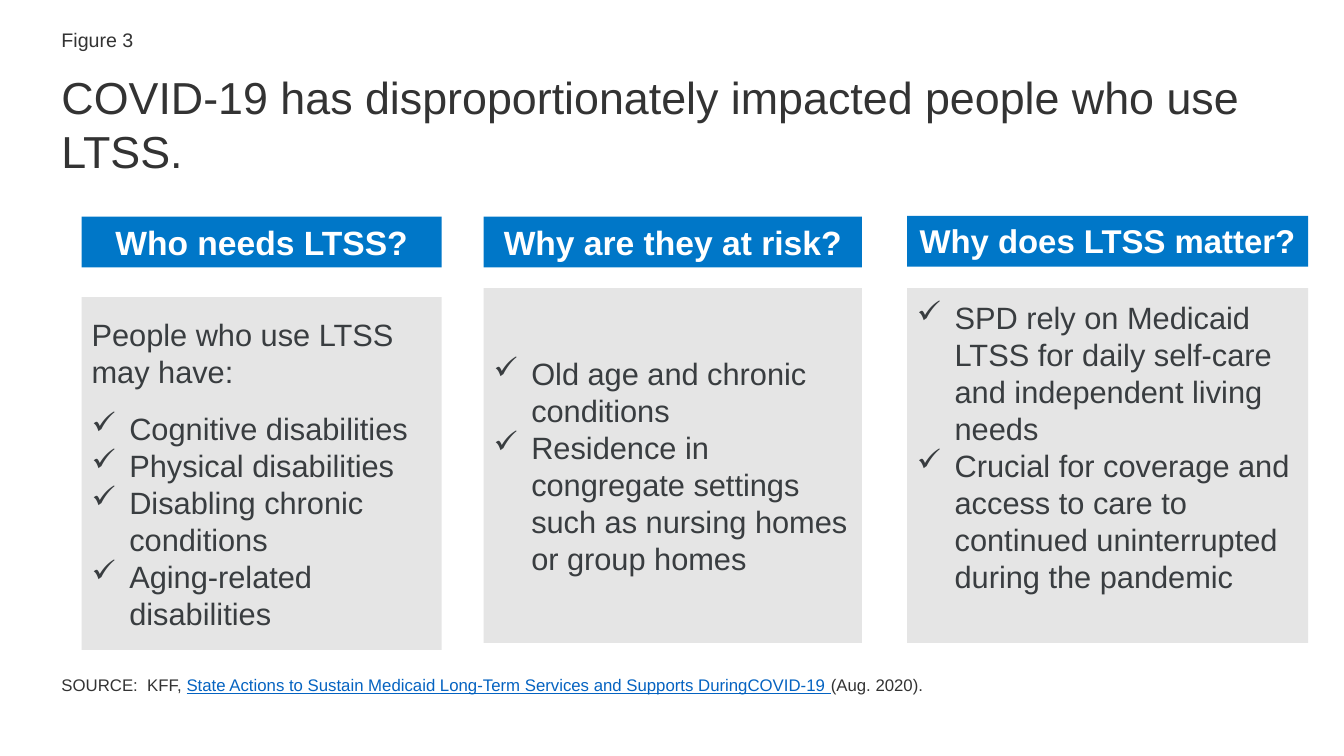
from dataclasses import dataclass

from lxml import etree
from pptx import Presentation
from pptx.dml.color import RGBColor
from pptx.enum.shapes import MSO_SHAPE
from pptx.enum.text import MSO_ANCHOR, PP_ALIGN
from pptx.oxml.ns import qn
from pptx.util import Cm, Pt

RECTANGLE = MSO_SHAPE.RECTANGLE
TOP, MIDDLE = MSO_ANCHOR.TOP, MSO_ANCHOR.MIDDLE
LEFT, CENTER = PP_ALIGN.LEFT, PP_ALIGN.CENTER


@dataclass(frozen=True)
class Theme:
    font: str = "Arial"
    ink: str = "333333"
    body_ink: str = "393D40"
    header_fill: str = "0077C8"
    header_ink: str = "FFFFFF"
    panel_fill: str = "E5E5E5"
    link_ink: str = "0563C1"
    label_size: float = 14
    title_size: float = 32
    header_size: float = 24
    tight_header_size: float = 23.5
    body_size: float = 22
    source_size: float = 12


def write(paragraph, text, font, size, color, bold=False, underline=False):
    """Append one formatted run to a paragraph."""
    run = paragraph.add_run()
    run.text = text
    run.font.name = font
    run.font.size = Pt(size)
    run.font.bold = bold
    run.font.underline = underline
    run.font.color.rgb = RGBColor.from_string(color)


class FigureSlide:
    def __init__(self, presentation, theme):
        self.theme = theme
        self.slide = presentation.slides.add_slide(presentation.slide_layouts[6])

    def text_box(self, left, top, width, height, runs, size, anchor=TOP):
        """Place a line of (text, color, underline) runs."""
        box = self.slide.shapes.add_textbox(Cm(left), Cm(top), Cm(width), Cm(height))
        frame = box.text_frame
        frame.word_wrap = True
        frame.vertical_anchor = anchor
        for text, color, underline in runs:
            write(frame.paragraphs[0], text, self.theme.font, size, color,
                  underline=underline)

    def rectangle(self, left, top, width, height, fill, anchor):
        shape = self.slide.shapes.add_shape(
            RECTANGLE, Cm(left), Cm(top), Cm(width), Cm(height))
        shape.shadow.inherit = False
        shape.fill.solid()
        shape.fill.fore_color.rgb = RGBColor.from_string(fill)
        shape.line.fill.background()
        shape.text_frame.word_wrap = True
        shape.text_frame.vertical_anchor = anchor
        return shape.text_frame

    def header(self, left, top, width, text, size):
        frame = self.rectangle(left, top, width, 1.28, self.theme.header_fill, TOP)
        frame.paragraphs[0].alignment = CENTER
        write(frame.paragraphs[0], text, self.theme.font, size,
              self.theme.header_ink, bold=True)

    def panel(self, left, top, width, height, lead, items, anchor, inset):
        """Place a grey panel with an optional lead line and check-marked items."""
        frame = self.rectangle(left, top, width, height, self.theme.panel_fill, anchor)
        frame.margin_top = Cm(inset)
        lines = ([lead] if lead else []) + items
        for index, text in enumerate(lines):
            paragraph = frame.paragraphs[0] if index == 0 else frame.add_paragraph()
            paragraph.alignment = LEFT
            if text == lead:
                paragraph.space_after = Pt(14)
            else:
                self.check_mark(paragraph)
            write(paragraph, text, self.theme.font, self.theme.body_size,
                  self.theme.body_ink)

    def check_mark(self, paragraph):
        properties = paragraph._p.get_or_add_pPr()
        indent = Cm(0.95)
        properties.set("marL", str(indent))
        properties.set("indent", str(-indent))
        etree.SubElement(properties, qn("a:buChar")).set("char", "✓")


def main():
    theme = Theme()
    presentation = Presentation()
    presentation.slide_width, presentation.slide_height = Cm(33.87), Cm(19.05)
    figure = FigureSlide(presentation, theme)

    # Figure label and title
    figure.text_box(1.3, 0.56, 13.08, 0.89, [("Figure 3", theme.ink, False)],
                    theme.label_size, MIDDLE)
    figure.text_box(
        1.3, 1.63, 31.29, 2.39,
        [("COVID-19 has disproportionately impacted people who use LTSS.",
          theme.ink, False)], theme.title_size)

    # Columns: left, width, header (top, text, size),
    # panel (top, height, lead, items, anchor, top inset)
    columns = [
        (2.06, 9.07, (5.46, "Who needs LTSS?", theme.header_size),
         (7.49, 8.89, "People who use LTSS may have:",
          ["Cognitive disabilities", "Physical disabilities",
           "Disabling chronic conditions", "Aging-related disabilities"],
          MIDDLE, 0.13)),
        (12.19, 9.53, (5.46, "Why are they at risk?", theme.header_size),
         (7.26, 8.94, None,
          ["Old age and chronic conditions",
           "Residence in congregate settings such as nursing homes or group homes"],
          MIDDLE, 0.13)),
        (22.86, 10.11, (5.44, "Why does LTSS matter?", theme.tight_header_size),
         (7.26, 8.94, None,
          ["SPD rely on Medicaid LTSS for daily self-care and independent living needs",
           "Crucial for coverage and access to care to continued uninterrupted "
           "during the pandemic"],
          TOP, 0.28)),
    ]
    for left, width, (header_top, text, size), (panel_top, *panel) in columns:
        figure.header(left, header_top, width, text, size)
        figure.panel(left, panel_top, width, *panel)

    # Source line
    figure.text_box(
        1.3, 16.87, 28.45, 1.91,
        [("SOURCE:  KFF, ", theme.ink, False),
         ("State Actions to Sustain Medicaid Long-Term Services and Supports "
          "DuringCOVID-19 ", theme.link_ink, True),
         ("(Aug. 2020).", theme.ink, False)], theme.source_size)

    presentation.save("out.pptx")


if __name__ == "__main__":
    main()
